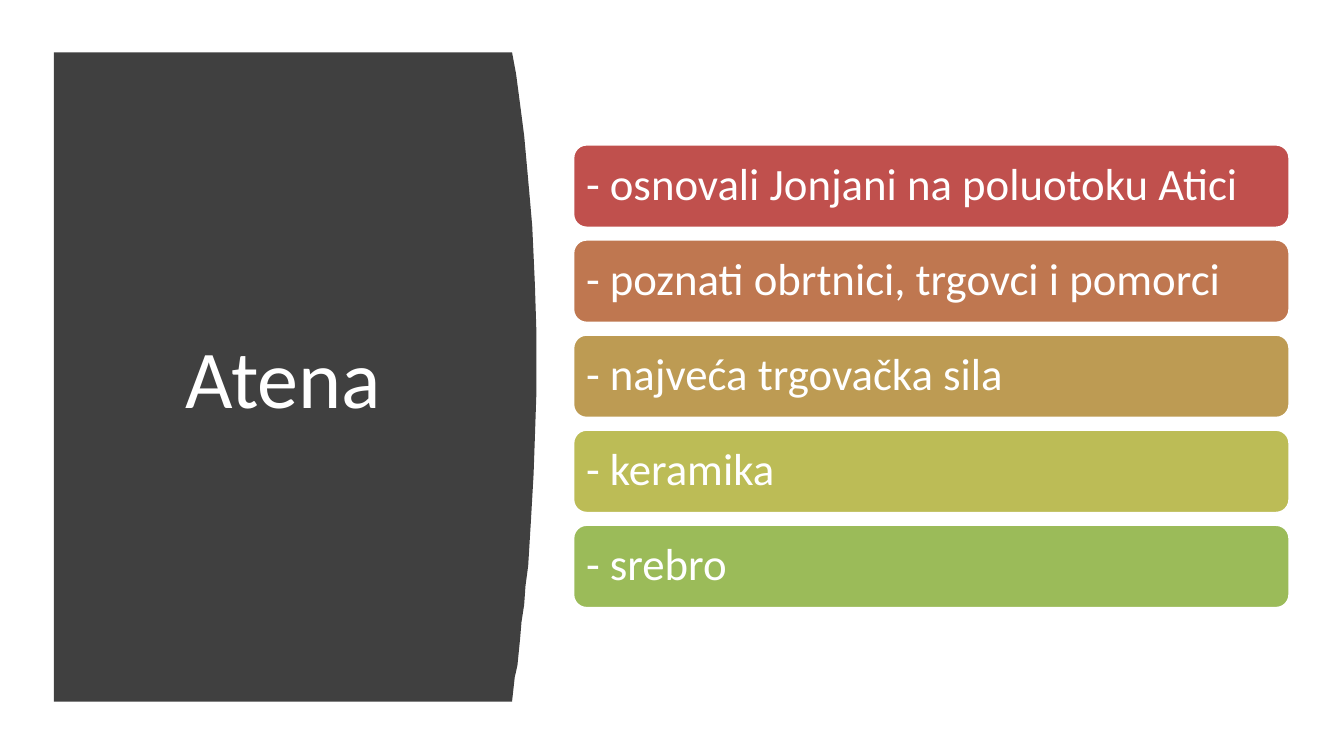
from pptx import Presentation
from pptx.dml.color import RGBColor
from pptx.enum.shapes import MSO_SHAPE
from pptx.enum.text import MSO_ANCHOR, PP_ALIGN
from pptx.util import Inches, Pt

WHITE = RGBColor(0xFF, 0xFF, 0xFF)
CHARCOAL = RGBColor(0x40, 0x40, 0x40)

FACTS = [
    ("- osnovali Jonjani na poluotoku Atici", RGBColor(0xC0, 0x50, 0x4D)),
    ("- poznati obrtnici, trgovci i pomorci", RGBColor(0xBF, 0x77, 0x50)),
    ("- najveća trgovačka sila", RGBColor(0xBD, 0x9B, 0x53)),
    ("- keramika", RGBColor(0xBC, 0xBC, 0x56)),
    ("- srebro", RGBColor(0x9B, 0xBB, 0x59)),
]
BAR_LEFT, BAR_WIDTH, BAR_HEIGHT = 4.26, 5.34, 0.63
FIRST_BAR_TOP, LAST_BAR_TOP = 1.07, 3.9
BAR_PITCH = (LAST_BAR_TOP - FIRST_BAR_TOP) / (len(FACTS) - 1)

# Right edge of the title panel, from top to bottom
PANEL_LEFT, PANEL_TOP, PANEL_BOTTOM = 0.4, 0.39, 5.22
PANEL_EDGE = [
    (3.81, PANEL_TOP), (3.84, 0.55), (3.87, 0.78), (3.9, 1.01), (3.92, 1.23),
    (3.94, 1.45), (3.96, 1.68), (3.97, 1.9), (3.98, 2.12), (3.99, 2.44),
    (3.99, 2.95), (3.98, 3.25), (3.97, 3.53), (3.95, 3.88), (3.93, 4.21),
    (3.91, 4.36), (3.9, 4.5), (3.88, 4.63), (3.87, 4.75), (3.85, 4.95),
    (3.83, 5.04), (3.81, PANEL_BOTTOM),
]


def add_text(shape, text, size):
    frame = shape.text_frame
    frame.word_wrap = True
    frame.vertical_anchor = MSO_ANCHOR.MIDDLE
    paragraph = frame.paragraphs[0]
    run = paragraph.add_run()
    run.text = text
    run.font.name = "Calibri"
    run.font.size = Pt(size)
    run.font.color.rgb = WHITE
    return paragraph


presentation = Presentation()
presentation.slide_width = Inches(10)
presentation.slide_height = Inches(10 * 9 / 16)
slide = presentation.slides.add_slide(presentation.slide_layouts[6])

# Title panel
builder = slide.shapes.build_freeform(
    Inches(PANEL_LEFT), Inches(PANEL_TOP), scale=1.0
)
outline = PANEL_EDGE + [(PANEL_LEFT, PANEL_BOTTOM)]
builder.add_line_segments([(Inches(x), Inches(y)) for x, y in outline], close=True)
panel = builder.convert_to_shape()
panel.shadow.inherit = False
panel.fill.solid()
panel.fill.fore_color.rgb = CHARCOAL
panel.line.fill.background()

title = slide.shapes.add_textbox(Inches(0.71), Inches(0.83), Inches(2.8), Inches(3.93))
add_text(title, "Atena", 44).alignment = PP_ALIGN.CENTER

# Fact bars
for index, (fact, color) in enumerate(FACTS):
    bar = slide.shapes.add_shape(
        MSO_SHAPE.ROUNDED_RECTANGLE,
        Inches(BAR_LEFT), Inches(FIRST_BAR_TOP + index * BAR_PITCH),
        Inches(BAR_WIDTH), Inches(BAR_HEIGHT),
    )
    bar.shadow.inherit = False
    bar.fill.solid()
    bar.fill.fore_color.rgb = color
    bar.line.color.rgb = WHITE
    bar.line.width = Pt(2)
    bar.text_frame.margin_left = bar.text_frame.margin_right = Inches(0.07)
    paragraph = add_text(bar, fact, 24)
    paragraph.alignment = PP_ALIGN.LEFT
    paragraph.line_spacing = 0.9

presentation.save("out.pptx")
